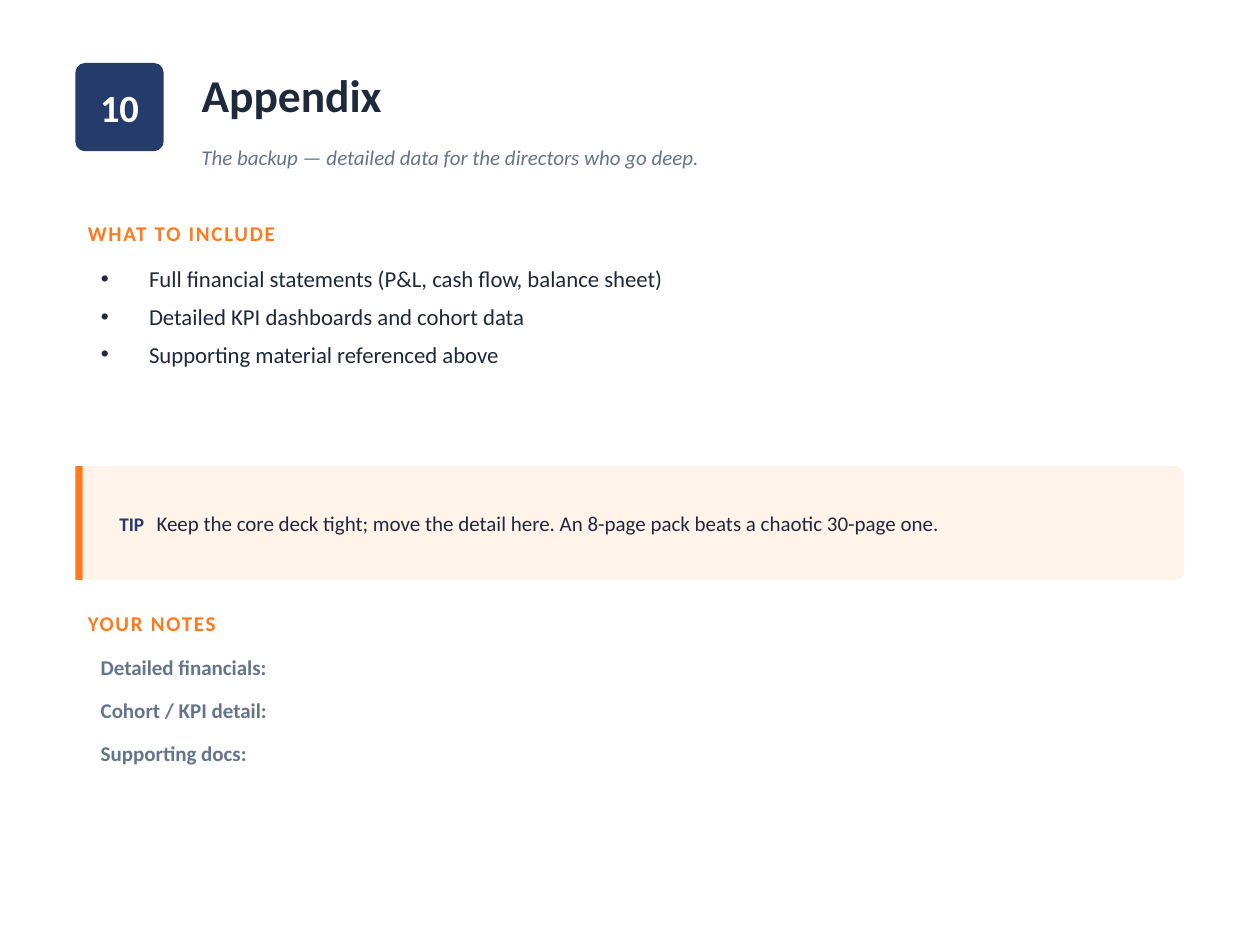
from pptx import Presentation
from pptx.dml.color import RGBColor
from pptx.enum.shapes import MSO_SHAPE as SHAPE
from pptx.enum.text import MSO_ANCHOR as ANCHOR, MSO_AUTO_SIZE as AUTO, PP_ALIGN as ALIGN
from pptx.oxml.ns import qn
from pptx.util import Cm, Pt
from lxml.etree import SubElement

NAVY = RGBColor(0x25, 0x3B, 0x6C)
ORANGE = RGBColor(0xFF, 0x7A, 0x1F)
CREAM = RGBColor(0xFF, 0xF3, 0xEA)
INK = RGBColor(0x1E, 0x29, 0x3B)
SLATE = RGBColor(0x64, 0x74, 0x8B)
WHITE = RGBColor(0xFF, 0xFF, 0xFF)

LEFT, WIDTH = 1.52, 22.35
HEAD_LEFT, HEAD_WIDTH = 3.81, 20.07
LIST_LEFT, LIST_WIDTH = 1.78, 22.1


class Page:
    font = "Calibri"
    indent = Cm(0.97)
    tip_tab = Cm(0.75)

    def __init__(self, prs):
        self.slide = prs.slides.add_slide(prs.slide_layouts[1])

    def run(self, p, text, size, color, bold=False, italic=False, spacing=None):
        r = p.add_run()
        r.text = text
        f = r.font
        f.name, f.size, f.bold, f.italic = self.font, Pt(size), bold, italic
        f.color.rgb = color
        if spacing:
            r._r.get_or_add_rPr().set("spc", str(spacing * 100))

    def place(self, sp, box, anchor=ANCHOR.MIDDLE):
        """Move a text-holding shape and return its text frame."""
        sp.left, sp.top, sp.width, sp.height = map(Cm, box)
        tf = sp.text_frame
        tf.word_wrap, tf.auto_size, tf.vertical_anchor = True, AUTO.NONE, anchor
        return tf

    def title(self, text, box):
        p = self.place(self.slide.shapes.title, box).paragraphs[0]
        p.alignment = ALIGN.LEFT
        self.run(p, text, 26, INK, bold=True)

    def text(self, text, box, size, color, **style):
        tf = self.place(self.slide.shapes.add_textbox(0, 0, 0, 0), box)
        self.run(tf.paragraphs[0], text, size, color, **style)

    def heading(self, text, top):
        self.text(text, (LEFT, top, WIDTH, 0.76), 12, ORANGE, bold=True, spacing=1)

    def paragraphs(self, tf, items, after, size, color, bold=False, bullet=None):
        for i, item in enumerate(items):
            p = tf.add_paragraph() if i else tf.paragraphs[0]
            p.space_before, p.space_after = Pt(0), Pt(after)
            if bullet:
                pPr = p._p.get_or_add_pPr()
                pPr.set("marL", str(self.indent))
                pPr.set("indent", str(-self.indent))
                SubElement(pPr, qn("a:buChar"), char=bullet)
            self.run(p, item, size, color, bold)

    def bullets(self, items, box):
        tf = self.place(self.slide.placeholders[1], box, ANCHOR.TOP)
        self.paragraphs(tf, items, 6, 13, INK, bullet="•")

    def prompts(self, items, box):
        tf = self.place(self.slide.shapes.add_textbox(0, 0, 0, 0), box, ANCHOR.TOP)
        self.paragraphs(tf, items, 10, 12, SLATE, bold=True)

    def block(self, kind, box, fill, corner=None):
        sp = self.slide.shapes.add_shape(kind, *map(Cm, box))
        sp.shadow.inherit = False
        sp.fill.solid()
        sp.fill.fore_color.rgb = fill
        sp.line.fill.background()
        if corner is not None:
            sp.adjustments[0] = corner
        return sp

    def badge(self, text, box):
        sp = self.block(SHAPE.ROUNDED_RECTANGLE, box, NAVY, 0.11)
        p = self.place(sp, box).paragraphs[0]
        p.alignment = ALIGN.CENTER
        self.run(p, text, 22, WHITE, bold=True)

    def tip(self, label, text, box):
        """Rounded panel with an accent bar on its left edge."""
        left, top, _, height = box
        sp = self.block(SHAPE.ROUNDED_RECTANGLE, box, CREAM, 0.07)
        self.block(SHAPE.RECTANGLE, (left, top, 0.15, height), ORANGE)
        tf = self.place(sp, box)
        tf.margin_left = Cm(0.84)
        p = tf.paragraphs[0]
        p.alignment = ALIGN.LEFT
        tabs = SubElement(p._p.get_or_add_pPr(), qn("a:tabLst"))
        SubElement(tabs, qn("a:tab"), pos=str(self.tip_tab), algn="l")
        self.run(p, label + "\t", 11, NAVY, bold=True)
        self.run(p, text, 12, INK)


def main():
    prs = Presentation()
    prs.slide_width, prs.slide_height = Cm(25.4), Cm(19.05)
    page = Page(prs)

    page.badge("10", (LEFT, 1.27, 1.78, 1.78))
    page.title("Appendix", (HEAD_LEFT, 1.27, HEAD_WIDTH, 1.27))
    page.text("The backup — detailed data for the directors who go deep.",
              (HEAD_LEFT, 2.54, HEAD_WIDTH, 1.27), 12, SLATE, italic=True)

    page.heading("WHAT TO INCLUDE", 4.32)
    page.bullets(["Full financial statements (P&L, cash flow, balance sheet)",
                  "Detailed KPI dashboards and cohort data",
                  "Supporting material referenced above"],
                 (LIST_LEFT, 5.21, LIST_WIDTH, 3.81))

    page.tip("TIP", "Keep the core deck tight; move the detail here. "
             "An 8-page pack beats a chaotic 30-page one.",
             (LEFT, 9.4, WIDTH, 2.29))

    page.heading("YOUR NOTES", 12.19)
    page.prompts(["Detailed financials:", "Cohort / KPI detail:", "Supporting docs:"],
                 (LIST_LEFT, 13.08, LIST_WIDTH, 4.83))

    prs.save("out.pptx")


if __name__ == "__main__":
    main()
